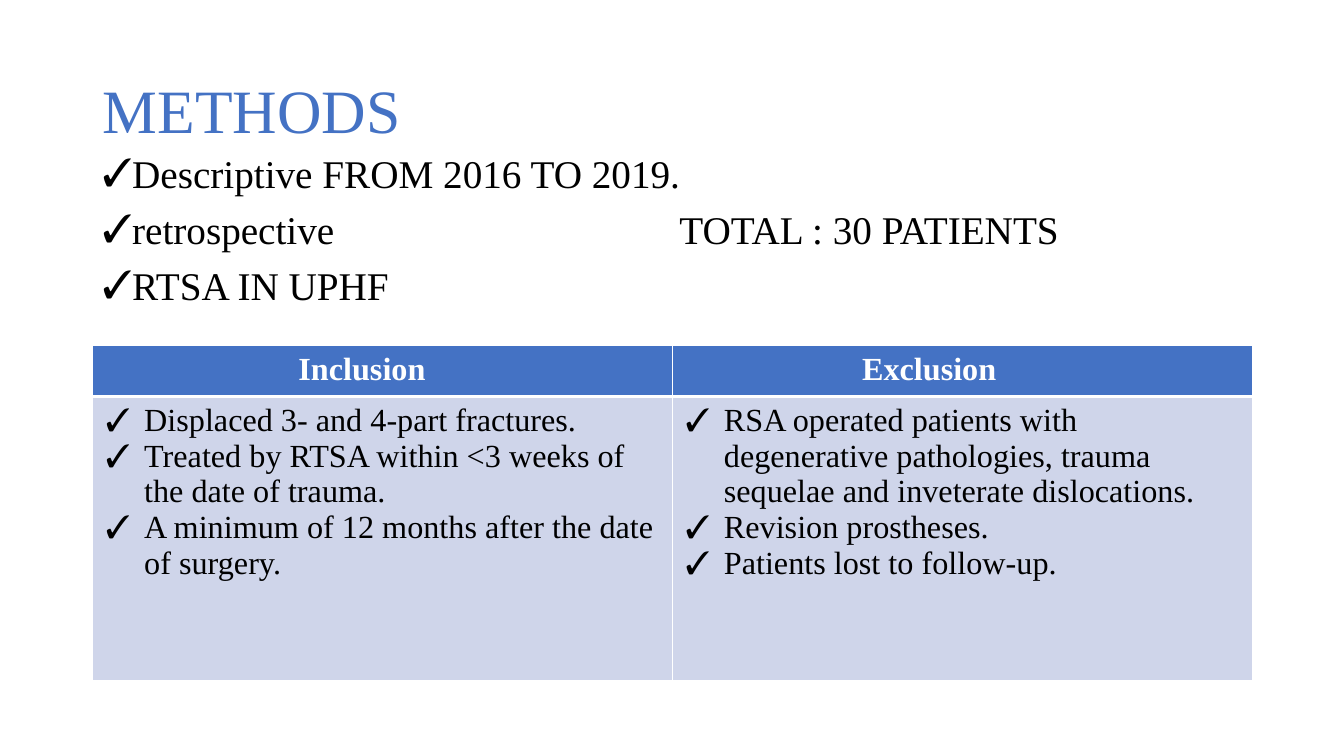
from lxml import etree
from pptx import Presentation
from pptx.dml.color import RGBColor
from pptx.enum.text import MSO_ANCHOR
from pptx.oxml.ns import qn
from pptx.util import Inches, Pt

MIDDLE, TOP = MSO_ANCHOR.MIDDLE, MSO_ANCHOR.TOP
BLUE = RGBColor(0x44, 0x72, 0xC4)
PALE = RGBColor(0xCF, 0xD5, 0xEA)
WHITE = RGBColor(0xFF, 0xFF, 0xFF)
BLACK = RGBColor(0, 0, 0)
FONT = "Times New Roman"

LEFT, WIDTH = Inches(0.92), Inches(11.5)
HEADER_HEIGHT, CRITERIA_HEIGHT = Inches(0.47), Inches(2.82)
TOTAL_TAB = Inches(5.72)


def write(paragraph, text, size, color, bold=False, indent=0, check=False, tab=None):
    """Fill one paragraph, with an indent and, if asked, a check mark and a tab stop."""
    paragraph.text = text
    props = paragraph._p.get_or_add_pPr()
    props.set("marL", str(Inches(indent)))
    props.set("indent", str(-Inches(indent) if check else 0))
    if check:
        etree.SubElement(props, qn("a:buFont"), typeface="Wingdings")
        etree.SubElement(props, qn("a:buChar"), char="✓")
        props.find(qn("a:buFont")).set("typeface", FONT)
    if tab:
        stops = etree.SubElement(props, qn("a:tabLst"))
        etree.SubElement(stops, qn("a:tab"), pos=str(tab), algn="l")
    font = paragraph.font
    font.name, font.size, font.bold = FONT, Pt(size), bold
    font.color.rgb = color


def style_cell(cell, fill, bottom_width):
    """Set margins, white borders and the fill of a table cell."""
    cell.margin_left = cell.margin_right = Inches(0.13)
    cell.margin_top = cell.margin_bottom = Inches(0.06)
    props = cell._tc.get_or_add_tcPr()
    for side, width in (("L", 1), ("R", 1), ("T", 1), ("B", bottom_width)):
        line = etree.SubElement(props, qn(f"a:ln{side}"), w=str(Pt(width)))
        solid = etree.SubElement(line, qn("a:solidFill"))
        etree.SubElement(solid, qn("a:srgbClr"), val=str(WHITE))
    cell.fill.solid()
    cell.fill.fore_color.rgb = fill


prs = Presentation()
prs.slide_width, prs.slide_height = Inches(13.33), Inches(7.5)
slide = prs.slides.add_slide(prs.slide_layouts[6])

# Title
title = slide.shapes.add_textbox(LEFT, Inches(0.4), WIDTH, Inches(1.45)).text_frame
title.word_wrap, title.vertical_anchor = True, MIDDLE
write(title.paragraphs[0], "METHODS", 44, BLUE)
title.paragraphs[0].line_spacing = 0.9

# Study design
design = slide.shapes.add_textbox(LEFT, Inches(1.48), WIDTH, Inches(1.85)).text_frame
design.word_wrap, design.vertical_anchor = True, TOP
design_points = [
    "Descriptive FROM 2016 TO 2019.",
    "retrospective\tTOTAL : 30 PATIENTS",
    "RTSA IN UPHF",
]
for i, point in enumerate(design_points):
    paragraph = design.add_paragraph() if i else design.paragraphs[0]
    write(paragraph, point, 28, BLACK, indent=0.25, check=True, tab=TOTAL_TAB)
    paragraph.line_spacing = 0.9
    paragraph.space_before = Pt(10)

# Inclusion and exclusion criteria: heading, heading indent, points
criteria = [
    ("Inclusion", 1.91, [
        "Displaced 3- and 4-part fractures.",
        "Treated by RTSA within <3 weeks of the date of trauma.",
        "A minimum of 12 months after the date of surgery.",
    ]),
    ("Exclusion", 1.75, [
        "RSA operated patients with degenerative pathologies, trauma "
        "sequelae and inveterate dislocations.",
        "Revision prostheses.",
        "Patients lost to follow-up.",
    ]),
]
table = slide.shapes.add_table(2, len(criteria), LEFT, Inches(3.43), WIDTH,
                               HEADER_HEIGHT + CRITERIA_HEIGHT).table
table.rows[0].height, table.rows[1].height = HEADER_HEIGHT, CRITERIA_HEIGHT
for column, (heading, heading_indent, points) in enumerate(criteria):
    header, body = table.cell(0, column), table.cell(1, column)
    style_cell(header, BLUE, 3)
    style_cell(body, PALE, 1)
    write(header.text_frame.paragraphs[0], heading, 23, WHITE, bold=True,
          indent=heading_indent)
    for i, point in enumerate(points):
        frame = body.text_frame
        paragraph = frame.add_paragraph() if i else frame.paragraphs[0]
        write(paragraph, point, 23, BLACK, indent=0.38, check=True)

prs.save("out.pptx")
